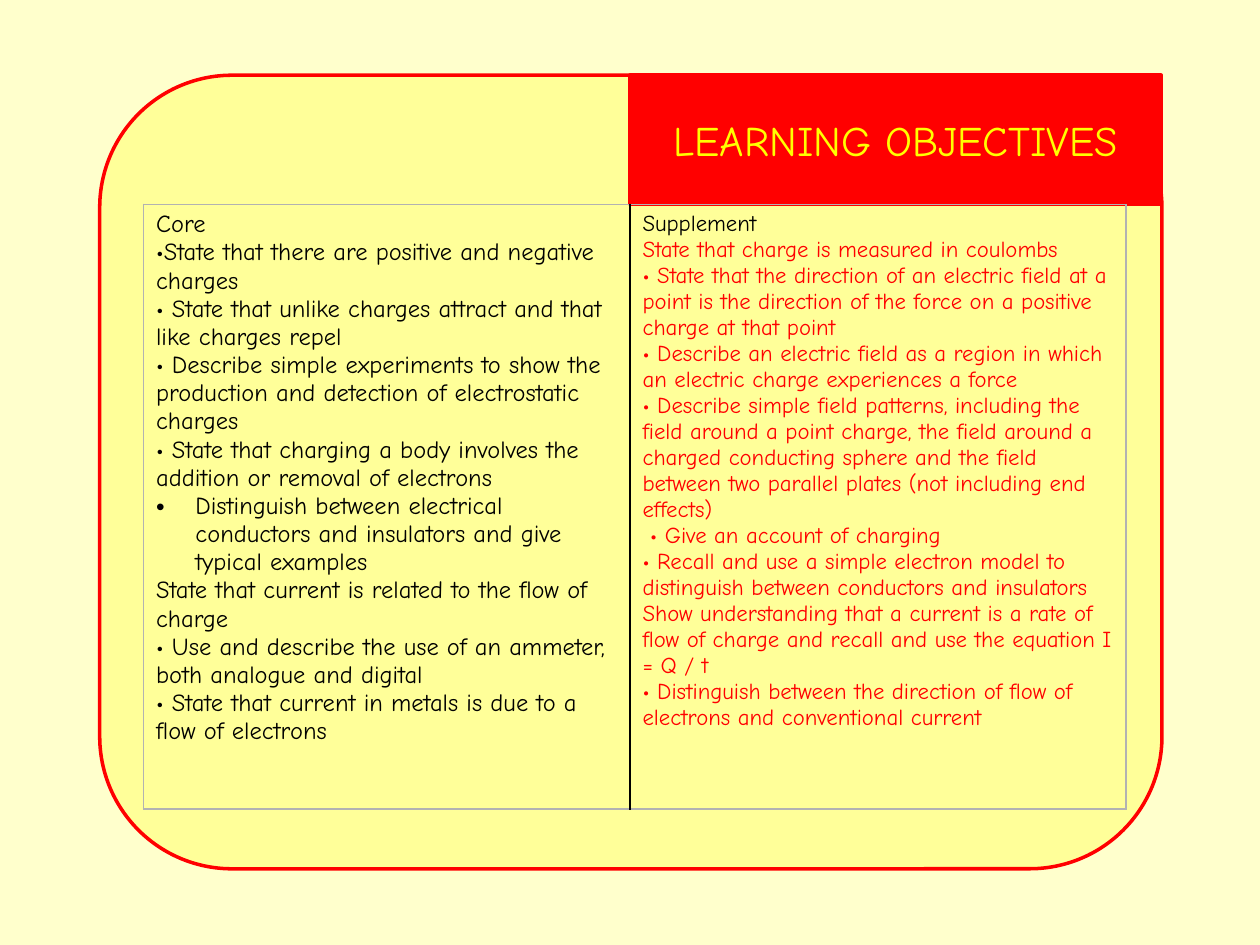
import pptx
import pptx.dml.color
import pptx.enum.shapes
import pptx.enum.text
import pptx.oxml
import pptx.oxml.ns
import pptx.util

Pt = pptx.util.Pt
SHAPES = pptx.enum.shapes.MSO_SHAPE
FONT = "Comic Neue"
RED, BLACK, GREY = "FF0000", "000000", "B2B2B2"
BULLETED = "Distinguish between electrical conductors and insulators and give typical examples"

CORE = [
    "Core",
    "•State that there are positive and negative charges",
    "• State that unlike charges attract and that like charges repel",
    "• Describe simple experiments to show the production and detection of electrostatic charges",
    "• State that charging a body involves the addition or removal of electrons",
    BULLETED,
    "State that current is related to the flow of charge",
    "• Use and describe the use of an ammeter, both analogue and digital",
    "• State that current in metals is due to a flow of electrons",
]
SUPPLEMENT = [
    "Supplement",
    "State that charge is measured in coulombs",
    "• State that the direction of an electric field at a point is the direction of the force "
    "on a positive charge at that point",
    "• Describe an electric field as a region in which an electric charge experiences a force",
    "• Describe simple field patterns, including the field around a point charge, the field "
    "around a charged conducting sphere and the field between two parallel plates "
    "(not including end effects)",
    " • Give an account of charging",
    "• Recall and use a simple electron model to distinguish between conductors and insulators",
    "Show understanding that a current is a rate of flow of charge and recall and use the "
    "equation I = Q / t",
    "• Distinguish between the direction of flow of electrons and conventional current",
]


def color(value):
    return pptx.dml.color.RGBColor.from_string(value)


def set_values(target, values):
    for name, value in values.items():
        setattr(target, name, value)


def drawing_element(markup):
    """Make an element from markup whose first tag lacks its namespace."""
    name, rest = markup[:-2].partition(" ")[::2]
    return pptx.oxml.parse_xml(f"{name} {pptx.oxml.ns.nsdecls('a')} {rest}/>")


def paint(shape, fill, line=None):
    shape.fill.solid()
    shape.fill.fore_color.rgb = color(fill)
    if line:
        shape.line.color.rgb = color(line)
        shape.line.width = Pt(2)
    else:
        shape.line.fill.background()


def add_panel(page, kind, place, fill, line=None):
    panel = page.shapes.add_shape(kind, *map(Pt, place))
    panel.shadow.inherit = False
    paint(panel, fill, line)


def add_span(para, text, size, text_color):
    span = para.add_run()
    span.text = text
    set_values(span.font, {"name": FONT, "size": Pt(size)})
    span.font.color.rgb = color(text_color)


def place_title(page, text, place):
    """Turn the title placeholder into a red rounded box above the panels."""
    title = page.shapes.title
    set_values(title, dict(zip(("left", "top", "width", "height"), map(Pt, place))))
    title._element.spPr.insert(1, drawing_element('<a:prstGeom prst="roundRect"/>'))
    paint(title, RED, RED)
    frame = title.text_frame
    set_values(frame, {
        "word_wrap": True,
        "auto_size": pptx.enum.text.MSO_AUTO_SIZE.NONE,
        "vertical_anchor": pptx.enum.text.MSO_ANCHOR.MIDDLE,
    })
    para = frame.paragraphs[0]
    para.alignment = pptx.enum.text.PP_ALIGN.CENTER
    add_span(para, text, 24, "FFFF00")
    page.shapes._spTree.append(title._element)


def add_bullet(para):
    properties = para._p.get_or_add_pPr()
    indent = Pt(22.5)
    properties.set("marL", str(indent))
    properties.set("indent", str(-indent))
    properties.append(drawing_element('<a:buFont typeface="Arial"/>'))
    properties.append(drawing_element('<a:buChar char="•"/>'))


def set_borders(cell, sides):
    """Draw 1 pt borders; sides maps L, R, T, B, in that order, to colours."""
    properties = cell._tc.get_or_add_tcPr()
    for index, (side, value) in enumerate(sides.items()):
        border = drawing_element(f'<a:ln{side} w="{Pt(1)}"/>')
        fill = drawing_element("<a:solidFill />")
        fill.append(drawing_element(f'<a:srgbClr val="{value}"/>'))
        border.append(fill)
        properties.insert(index, border)


def fill_cell(cell, lines, size, body_color):
    cell.fill.background()
    for index, line in enumerate(lines):
        frame = cell.text_frame
        para = frame.add_paragraph() if index else frame.paragraphs[0]
        add_span(para, line, size, body_color if index else BLACK)
        if line == BULLETED:
            add_bullet(para)


def add_objectives(page):
    widths = (278, 283.5)
    frame = page.shapes.add_table(1, 2, Pt(82), Pt(116.75), Pt(sum(widths)), Pt(345.5))
    table = frame.table
    set_values(table, {"first_row": False, "horz_banding": False})
    for column, width in zip(table.columns, widths):
        column.width = Pt(width)
    core, supplement = table.rows[0].cells
    fill_cell(core, CORE, 14, BLACK)
    fill_cell(supplement, SUPPLEMENT, 13, RED)
    outer = dict.fromkeys("LRTB", GREY)
    set_borders(core, {**outer, "R": BLACK})
    set_borders(supplement, {**outer, "L": BLACK})


def main():
    deck = pptx.Presentation()
    set_values(deck, {"slide_width": Pt(720), "slide_height": Pt(540)})
    page = deck.slides.add_slide(deck.slide_layouts.get_by_name("Title Only"))
    add_panel(page, SHAPES.RECTANGLE, (0, 0, 720, 540), "FFFFCC")
    add_panel(page, SHAPES.ROUNDED_RECTANGLE, (57, 43, 607, 453.5), "FFFF99", RED)
    place_title(page, "LEARNING OBJECTIVES", (360, 43, 303.5, 73.5))
    add_objectives(page)
    deck.save("out.pptx")


if __name__ == "__main__":
    main()
